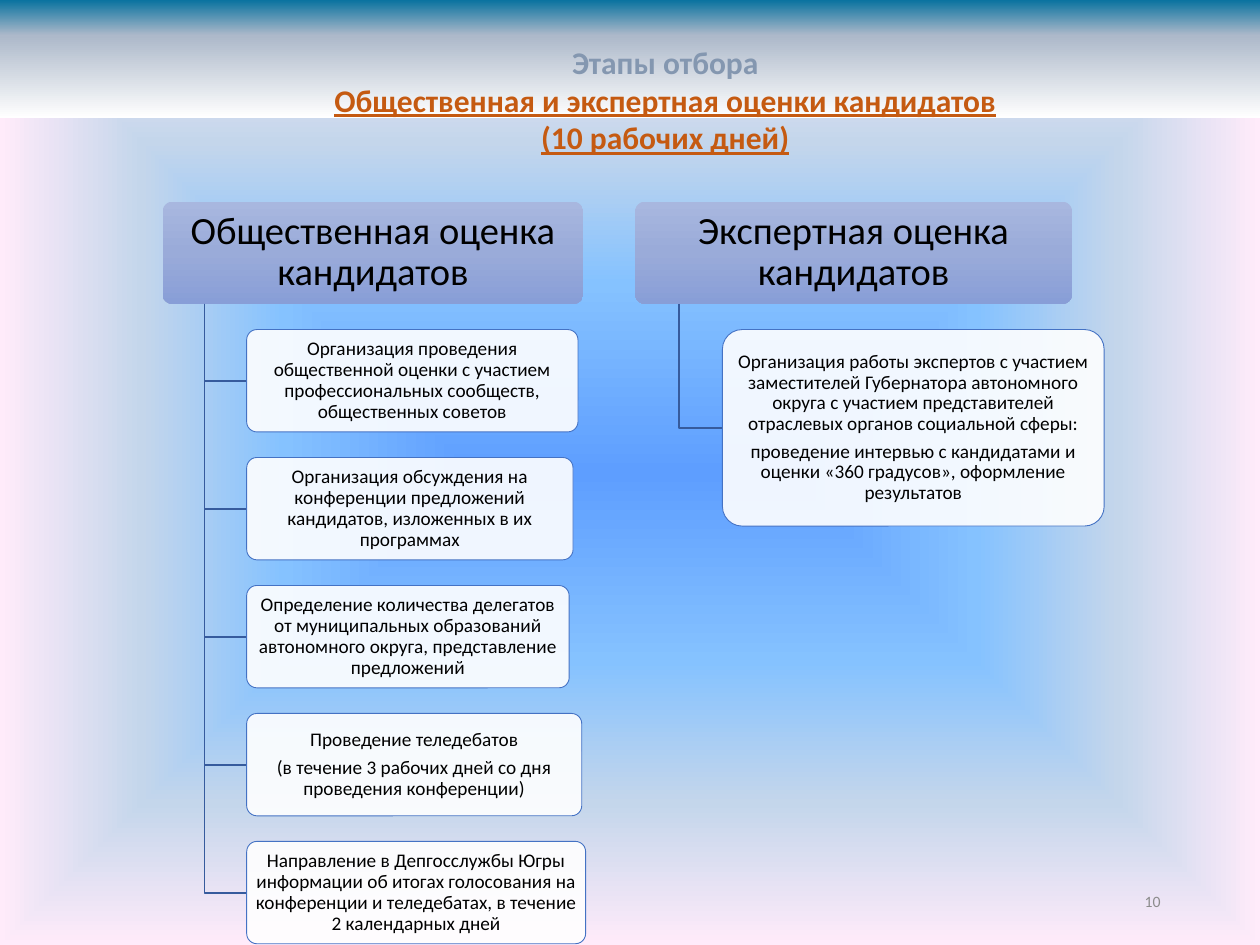
"""Build the slide on the public and expert assessment of candidates."""
from dataclasses import dataclass

from lxml import etree
from pptx import Presentation
from pptx import util as u
from pptx.dml.color import RGBColor
from pptx.enum import shapes, text
from pptx.oxml import ns


@dataclass(frozen=True)
class Theme:
    font: str = "Calibri"
    black: str = "000000"
    white: str = "FFFFFF"
    muted: str = "8497B0"
    accent: str = "C55A11"
    number: str = "8C8C8C"
    branch: str = "365B9D"
    outline: str = "4472C4"
    background: tuple = ((0, "5E9EFF"), (40, "85C2FF"), (70, "C4D6EB"), (100, "FFEBFA"))
    band: tuple = ((0, "09729F"), (30, "ADB9CA"), (100, "FFFFFF"))
    header: tuple = ((0, "A8B7DF"), (50, "9AABD9"), (100, "889ED7"))
    title_size: int = 18
    header_size: int = 22
    card_size: int = 11
    number_size: int = 9


@dataclass(frozen=True)
class Card:
    width: float
    paragraphs: tuple[str, ...]
    height: float = 6.5 / 8


@dataclass(frozen=True)
class Column:
    left: float
    width: float
    heading: str
    cards: tuple[Card, ...]


THEME = Theme()
TOP = 1.6
HEADER_HEIGHT = 6.5 / 8
GAP = HEADER_HEIGHT / 4
COLUMNS = (
    Column(1.29, 3.34, "Общественная оценка кандидатов", (
        Card(2.63, ("Организация проведения общественной оценки с участием "
                    "профессиональных сообществ, общественных советов",)),
        Card(2.59, ("Организация обсуждения на конференции предложений "
                    "кандидатов, изложенных в их программах",)),
        Card(2.56, ("Определение количества делегатов от муниципальных образований "
                    "автономного округа, представление предложений",)),
        Card(2.66, ("Проведение теледебатов",
                    "(в течение 3 рабочих дней со дня проведения конференции)")),
        Card(2.69, ("Направление в Депгосслужбы Югры информации об итогах голосования "
                    "на конференции и теледебатах, в течение 2 календарных дней",)),
    )),
    Column(5.04, 3.47, "Экспертная оценка кандидатов", (
        Card(3.03, ("Организация работы экспертов с участием заместителей Губернатора "
                    "автономного округа с участием представителей отраслевых органов "
                    "социальной сферы:",
                    "проведение интервью с кандидатами и оценки «360 градусов», "
                    "оформление результатов"), 1.56),
    )),
)


def set_gradient(fill, properties, stops: tuple, centred: bool = False) -> None:
    """Fill with a top-down gradient, or one spreading from the centre."""
    fill.gradient()
    gradient = properties.find(ns.qn("a:gradFill"))
    gradient.clear()
    stop_list = etree.SubElement(gradient, ns.qn("a:gsLst"))
    for position, color in stops:
        stop = etree.SubElement(stop_list, ns.qn("a:gs"), pos=str(position * 1000))
        etree.SubElement(stop, ns.qn("a:srgbClr"), val=color)
    if centred:
        shading = etree.SubElement(gradient, ns.qn("a:path"), path="shape")
        sides = dict.fromkeys("ltrb", "50000")
        etree.SubElement(shading, ns.qn("a:fillToRect"), **sides)
    else:
        etree.SubElement(gradient, ns.qn("a:lin"), ang="5400000", scaled="0")


def style_paragraph(paragraph, size: int, color: str, align=text.PP_ALIGN.CENTER) -> None:
    """Set the font, colour and alignment of a paragraph."""
    paragraph.alignment = align
    paragraph.font.name = THEME.font
    paragraph.font.size = u.Pt(size)
    paragraph.font.color.rgb = RGBColor.from_string(color)


def write_box(shape, paragraphs: tuple[str, ...], size: int, inset: float) -> None:
    """Write centred paragraphs into a box."""
    frame = shape.text_frame
    frame.word_wrap = True
    frame.vertical_anchor = text.MSO_ANCHOR.MIDDLE
    frame.margin_left = frame.margin_right = u.Inches(inset)
    frame.margin_top = frame.margin_bottom = u.Inches(min(inset, 0.03))
    frame.text = "\n".join(paragraphs)
    for paragraph in frame.paragraphs:
        style_paragraph(paragraph, size, THEME.black)
        paragraph.line_spacing = 0.9
    for paragraph in frame.paragraphs[:-1]:
        paragraph.space_after = u.Pt(size * 0.35)


def add_box(slide, kind, left: float, top: float, width: float, height: float):
    """Add a shape without shadow or outline."""
    shape = slide.shapes.add_shape(
        kind, u.Inches(left), u.Inches(top), u.Inches(width), u.Inches(height))
    shape.shadow.inherit = False
    shape.line.fill.background()
    if kind == shapes.MSO_SHAPE.ROUNDED_RECTANGLE:
        shape.adjustments[0] = 0.1
    return shape


def add_branch(slide, trunk: float, top: float, end: float, middle: float) -> None:
    """Draw the elbow line from a header to a card."""
    builder = slide.shapes.build_freeform(u.Inches(trunk), u.Inches(top))
    corners = [(trunk, middle), (end, middle)]
    builder.add_line_segments([(u.Inches(x), u.Inches(y)) for x, y in corners], close=False)
    branch = builder.convert_to_shape()
    branch.shadow.inherit = False
    branch.fill.background()
    branch.line.color.rgb = RGBColor.from_string(THEME.branch)
    branch.line.width = u.Pt(1)


def add_card(slide, card: Card, left: float, top: float) -> None:
    """Draw one translucent white card."""
    shape = add_box(slide, shapes.MSO_SHAPE.ROUNDED_RECTANGLE,
                    left, top, card.width, card.height)
    shape.fill.solid()
    shape.fill.fore_color.rgb = RGBColor.from_string(THEME.white)
    color = shape.element.spPr.find(ns.qn("a:solidFill"))[0]
    etree.SubElement(color, ns.qn("a:alpha"), val="90000")
    shape.line.color.rgb = RGBColor.from_string(THEME.outline)
    shape.line.width = u.Pt(0.5)
    write_box(shape, card.paragraphs, THEME.card_size, 0.02)


def add_column(slide, column: Column) -> None:
    """Draw a header with its cards hanging below."""
    header = add_box(slide, shapes.MSO_SHAPE.ROUNDED_RECTANGLE,
                     column.left, TOP, column.width, HEADER_HEIGHT)
    set_gradient(header.fill, header.element.spPr, THEME.header)
    write_box(header, (column.heading,), THEME.header_size, 0.05)
    indent = column.width / 10
    trunk, card_left = column.left + indent, column.left + 2 * indent
    bottom = TOP + HEADER_HEIGHT
    top = bottom + GAP
    for card in column.cards:
        add_branch(slide, trunk, bottom, card_left, top + card.height / 2)
        add_card(slide, card, card_left, top)
        top += card.height + GAP


def add_title(slide) -> None:
    """Place and format the three-line title."""
    title = slide.shapes.title
    title.left, title.top = u.Inches(1.54), u.Inches(0.29)
    title.width, title.height = u.Inches(7.48), u.Inches(1.31)
    frame = title.text_frame
    frame.auto_size = text.MSO_AUTO_SIZE.NONE
    frame.vertical_anchor = text.MSO_ANCHOR.TOP
    frame.text = ("Этапы отбора\nОбщественная и экспертная оценки кандидатов\n"
                  "(10 рабочих дней)")
    for index, paragraph in enumerate(frame.paragraphs):
        style_paragraph(paragraph, THEME.title_size, THEME.accent if index else THEME.muted)
        paragraph.font.bold = True
        paragraph.font.underline = index > 0


def add_number(slide) -> None:
    """Add the slide number."""
    box = slide.shapes.add_textbox(
        u.Inches(7.06), u.Inches(6.95), u.Inches(2.25), u.Inches(0.4))
    frame = box.text_frame
    frame.word_wrap = True
    frame.vertical_anchor = text.MSO_ANCHOR.MIDDLE
    frame.text = "10"
    style_paragraph(frame.paragraphs[0], THEME.number_size, THEME.number, text.PP_ALIGN.RIGHT)


def main() -> None:
    """Build and save the presentation."""
    presentation = Presentation()
    presentation.slide_width, presentation.slide_height = u.Inches(10), u.Inches(7.5)
    slide = presentation.slides.add_slide(presentation.slide_layouts[5])
    background = slide.background.fill
    background.solid()
    properties = slide.element.find(".//" + ns.qn("p:bgPr"))
    set_gradient(background, properties, THEME.background, centred=True)
    band = add_box(slide, shapes.MSO_SHAPE.RECTANGLE, 0, 0, 10, 0.94)
    set_gradient(band.fill, band.element.spPr, THEME.band)
    slide.shapes.title.element.addprevious(band.element)
    add_title(slide)
    add_number(slide)
    for column in COLUMNS:
        add_column(slide, column)
    presentation.save("out.pptx")


if __name__ == "__main__":
    main()
